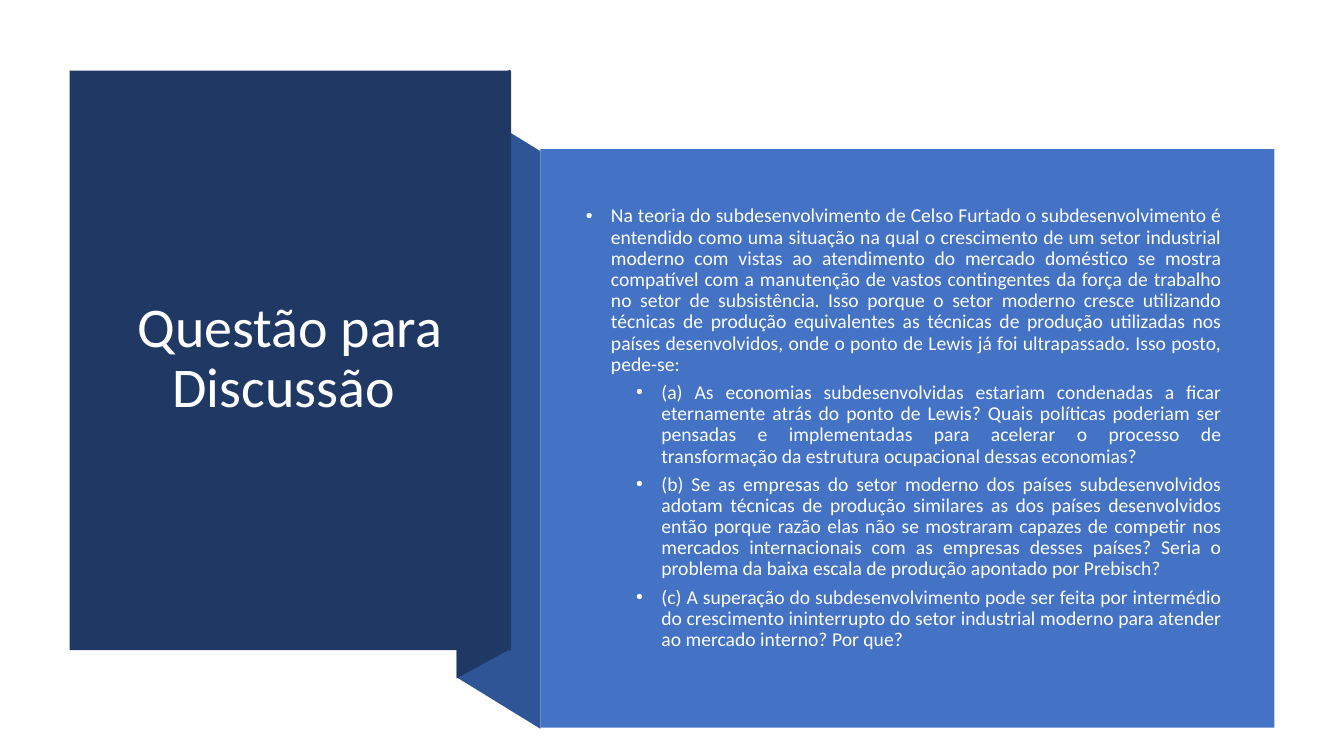
from pptx import Presentation
from pptx.dml.color import RGBColor
from pptx.enum.shapes import MSO_SHAPE
from pptx.enum.text import MSO_ANCHOR, MSO_AUTO_SIZE, PP_ALIGN
from pptx.oxml.ns import qn
from pptx.util import Inches, Pt
from lxml.etree import SubElement

COLORS = {
    "navy": "203864",
    "fold": "2F5597",
    "panel": "4472C4",
    "title": "FFFFFF",
    "body": "FEFFFF",
}

TITLE = "Questão para Discussão "
QUESTION = (
    "Na teoria do subdesenvolvimento de Celso Furtado o subdesenvolvimento é entendido como "
    "uma situação na qual o crescimento de um setor industrial moderno com vistas ao "
    "atendimento do mercado doméstico se mostra compatível com a manutenção de vastos "
    "contingentes da força de trabalho no setor de subsistência. Isso porque o setor moderno "
    "cresce utilizando técnicas de produção equivalentes as técnicas de produção utilizadas "
    "nos países desenvolvidos, onde o ponto de Lewis já foi ultrapassado. Isso posto, pede-se: "
)
ITEMS = [
    "(a) As economias subdesenvolvidas estariam condenadas a ficar eternamente atrás do ponto "
    "de Lewis? Quais políticas poderiam ser pensadas e implementadas para acelerar o processo "
    "de transformação da estrutura ocupacional dessas economias?",
    "(b) Se as empresas do setor moderno dos países subdesenvolvidos adotam técnicas de "
    "produção similares as dos países desenvolvidos então porque razão elas não se mostraram "
    "capazes de competir nos mercados internacionais com as empresas desses países? Seria o "
    "problema da baixa escala de produção apontado por Prebisch? ",
    "(c) A superação do subdesenvolvimento pode ser feita por intermédio do crescimento "
    "ininterrupto do setor industrial moderno para atender ao mercado interno? Por que? ",
]


class SlideBuilder:
    font = "Calibri"

    def __init__(self, prs):
        self.s = prs.slides.add_slide(prs.slide_layouts[1])

    def paint(self, sp, color):
        sp.shadow.inherit = False
        sp.fill.solid()
        sp.fill.fore_color.rgb = RGBColor.from_string(COLORS[color])
        sp.line.fill.background()

    def rect(self, x, y, w, h, color):
        box = map(Inches, (x, y, w, h))
        self.paint(self.s.shapes.add_shape(MSO_SHAPE.RECTANGLE, *box), color)

    def polygon(self, points, color):
        start, *rest = [(Inches(x), Inches(y)) for x, y in points]
        fb = self.s.shapes.build_freeform(*start)
        fb.add_line_segments(rest, close=True)
        self.paint(fb.convert_to_shape(), color)

    def placeholder(self, idx, x, y, w, h):
        sp = self.s.placeholders[idx]
        sp.left, sp.top, sp.width, sp.height = map(Inches, (x, y, w, h))
        sp.element.getparent().append(sp.element)
        tf = sp.text_frame
        frame = {"word_wrap": True, "auto_size": MSO_AUTO_SIZE.NONE,
                 "vertical_anchor": MSO_ANCHOR.MIDDLE}
        for name, value in frame.items():
            setattr(tf, name, value)
        return tf

    def paragraph(self, p, text, size, color, **formats):
        for name, value in {"line_spacing": 0.9, **formats}.items():
            setattr(p, name, value)
        r = p.add_run()
        r.text = text
        for name, value in {"name": self.font, "size": Pt(size)}.items():
            setattr(r.font, name, value)
        r.font.color.rgb = RGBColor.from_string(COLORS[color])

    def title(self, text, *box):
        p = self.placeholder(0, *box).paragraphs[0]
        self.paragraph(p, text, 40, "title", alignment=PP_ALIGN.CENTER, space_before=Pt(0))

    def bullets(self, entries, *box):
        tf = self.placeholder(1, *box)
        for i, (level, text) in enumerate(entries):
            p = tf.add_paragraph() if i else tf.paragraphs[0]
            self.paragraph(p, text, 14, "body", level=level, alignment=PP_ALIGN.JUSTIFY,
                           space_before=Pt(5 if level else 10))
            pPr = p._p.get_or_add_pPr()
            pPr.set("marL", str(Inches(0.25 + 0.5 * level)))
            pPr.set("indent", str(Inches(-0.25)))
            SubElement(pPr, qn("a:buFont")).set("typeface", "Arial")
            SubElement(pPr, qn("a:buChar")).set("char", "•")


def main():
    prs = Presentation()
    prs.slide_width, prs.slide_height = Inches(13.33), Inches(7.5)
    slide = SlideBuilder(prs)
    slide.polygon([(5.36, 7.23), (4.53, 6.72), (4.53, 0.99), (5.36, 1.5)], "fold")
    slide.polygon([(5.06, 6.44), (4.53, 6.73), (4.53, 0.98), (5.06, 0.69)], "navy")
    slide.rect(0.69, 0.7, 4.38, 5.75, "navy")
    slide.title(TITLE, 1.02, 1.07, 3.71, 4.99)
    slide.rect(5.36, 1.48, 7.28, 5.74, "panel")
    entries = [(0, QUESTION)] + [(1, item) for item in ITEMS]
    slide.bullets(entries, 5.71, 1.88, 6.51, 4.74)
    prs.save("out.pptx")


if __name__ == "__main__":
    main()
